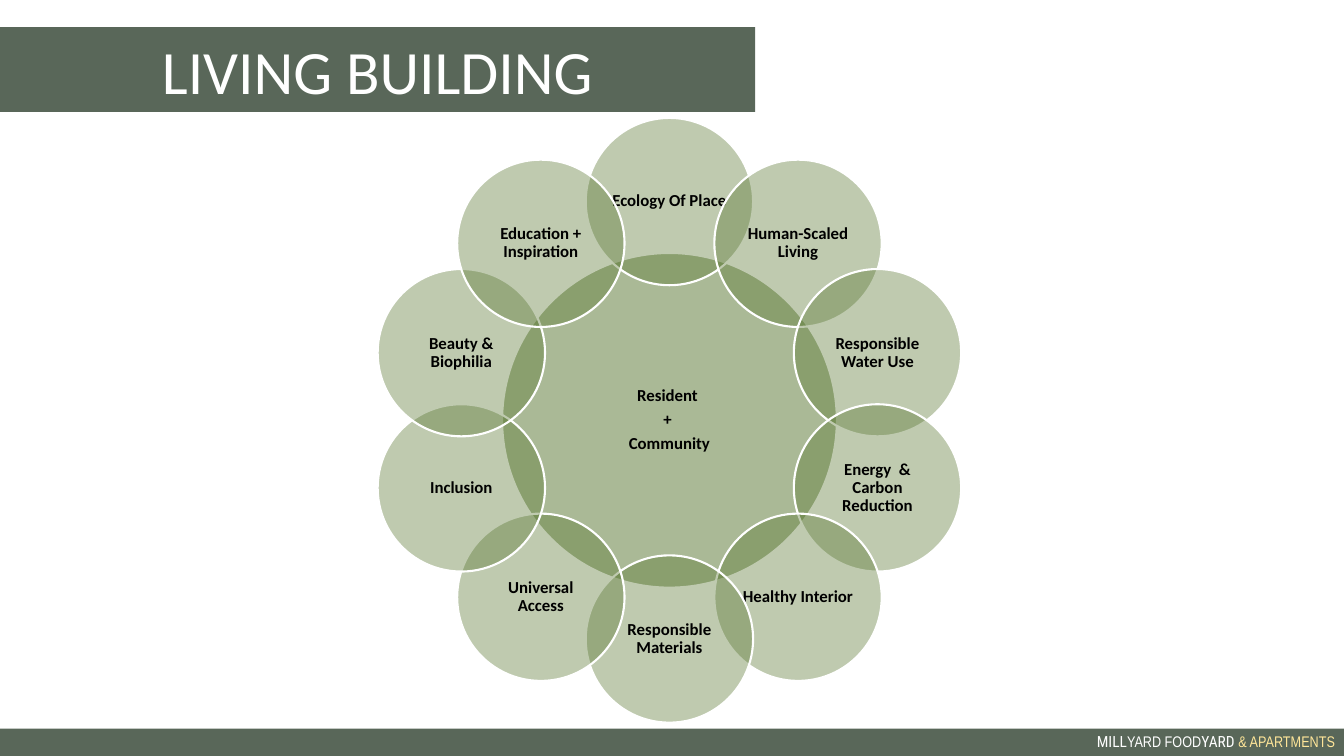
from dataclasses import dataclass
from math import cos, pi, sin

from lxml.etree import SubElement
from pptx import Presentation
from pptx.dml.color import RGBColor
from pptx.enum.shapes import MSO_SHAPE as Shape
from pptx.enum.text import MSO_ANCHOR as Anchor, MSO_AUTO_SIZE as AutoSize, PP_ALIGN as Align
from pptx.oxml.ns import qn
from pptx.util import Inches, Pt


@dataclass(frozen=True)
class Theme:
    band: str = "596759"
    leaf: str = "57752F"
    light: str = "FFFFFF"
    dark: str = "000000"
    accent: str = "FFE699"
    main_font: str = "Calibri"
    footer_wide: str = "Roboto Condensed"
    footer_narrow: str = "Arial Narrow"
    title_size: int = 44
    label_size: int = 12
    footer_size: int = 11


THEME = Theme()
CENTER_X, CENTER_Y = 6.64, 4.17
RING_RADIUS = 2.17
HUB_SIZE, PETAL_SIZE = 3.32, 1.66
HUB_LINES = ["Resident ", "+ ", "Community"]
PETALS = [
    "Ecology Of Place",
    "Human-Scaled Living",
    "Responsible Water Use",
    "Energy  & Carbon Reduction",
    "Healthy Interior",
    "Responsible Materials",
    "Universal Access",
    "Inclusion",
    "Beauty & Biophilia",
    "Education + Inspiration",
]
FOOTER_RUNS = [
    ("MILL", THEME.footer_wide, THEME.light),
    ("YARD FOOD", THEME.footer_narrow, THEME.light),
    ("YARD ", THEME.footer_wide, THEME.light),
    ("& APARTMENTS", THEME.footer_narrow, THEME.accent),
]


def set_all(target, values):
    for name, value in values.items():
        setattr(target, name, value)


def add_run(paragraph, text, font, size, color, bold=False):
    run = paragraph.add_run()
    run.text = text
    set_all(run.font, {"name": font, "size": Pt(size), "bold": bold})
    run.font.color.rgb = RGBColor.from_string(color)


def fill_solid(shape, color):
    shape.fill.solid()
    shape.fill.fore_color.rgb = RGBColor.from_string(color)


def add_circle(slide, x, y, size, opacity, lines):
    """Add a translucent labelled circle centred on x, y; opacity is in percent."""
    circle = slide.shapes.add_shape(
        Shape.OVAL, Inches(x - size / 2), Inches(y - size / 2), Inches(size), Inches(size))
    circle.shadow.inherit = False
    fill_solid(circle, THEME.leaf)
    tint = circle.fill._xPr.find(qn("a:solidFill"))[0]
    SubElement(tint, qn("a:alpha"), val=str(opacity * 1000))
    circle.line.color.rgb = RGBColor.from_string(THEME.light)
    circle.line.width = Pt(1.5)

    frame = circle.text_frame
    inset = Inches(0.02)
    set_all(frame, {"word_wrap": True, "vertical_anchor": Anchor.MIDDLE,
                    "margin_left": inset, "margin_right": inset,
                    "margin_top": inset, "margin_bottom": inset})
    for index, line in enumerate(lines):
        paragraph = frame.add_paragraph() if index else frame.paragraphs[0]
        set_all(paragraph, {"alignment": Align.CENTER, "line_spacing": 0.9,
                            "space_after": Pt(0.35 * THEME.label_size)})
        add_run(paragraph, line, THEME.main_font, THEME.label_size, THEME.dark, bold=True)


def add_flower(slide):
    add_circle(slide, CENTER_X, CENTER_Y, HUB_SIZE, 50, HUB_LINES)
    for index, label in enumerate(PETALS):
        angle = 2 * pi * index / len(PETALS)
        add_circle(slide, CENTER_X + RING_RADIUS * sin(angle),
                   CENTER_Y - RING_RADIUS * cos(angle), PETAL_SIZE, 38, [label])


def format_title(slide, text):
    title = slide.shapes.title
    set_all(title, {"left": Inches(0), "top": Inches(0.27),
                    "width": Inches(7.49), "height": Inches(0.84)})
    fill_solid(title, THEME.band)
    set_all(title.text_frame, {"auto_size": AutoSize.NONE, "word_wrap": True,
                               "vertical_anchor": Anchor.MIDDLE})
    paragraph = title.text_frame.paragraphs[0]
    paragraph.alignment = Align.CENTER
    add_run(paragraph, text, THEME.main_font, THEME.title_size, THEME.light)


def add_footer(slide):
    band = slide.shapes.add_shape(
        Shape.RECTANGLE, Inches(0), Inches(7.23), Inches(13.33), Inches(0.27))
    band.shadow.inherit = False
    fill_solid(band, THEME.band)
    band.line.fill.background()

    credit = slide.shapes.add_textbox(Inches(9.62), Inches(7.21), Inches(3.72), Inches(0.29))
    credit.text_frame.word_wrap = True
    paragraph = credit.text_frame.paragraphs[0]
    paragraph.alignment = Align.RIGHT
    for text, font, color in FOOTER_RUNS:
        add_run(paragraph, text, font, THEME.footer_size, color)


def main():
    deck = Presentation()
    set_all(deck, {"slide_width": Inches(13.33), "slide_height": Inches(7.5)})
    slide = deck.slides.add_slide(deck.slide_layouts.get_by_name("Title Only"))
    format_title(slide, "LIVING BUILDING")
    add_flower(slide)
    add_footer(slide)
    deck.save("out.pptx")


if __name__ == "__main__":
    main()
